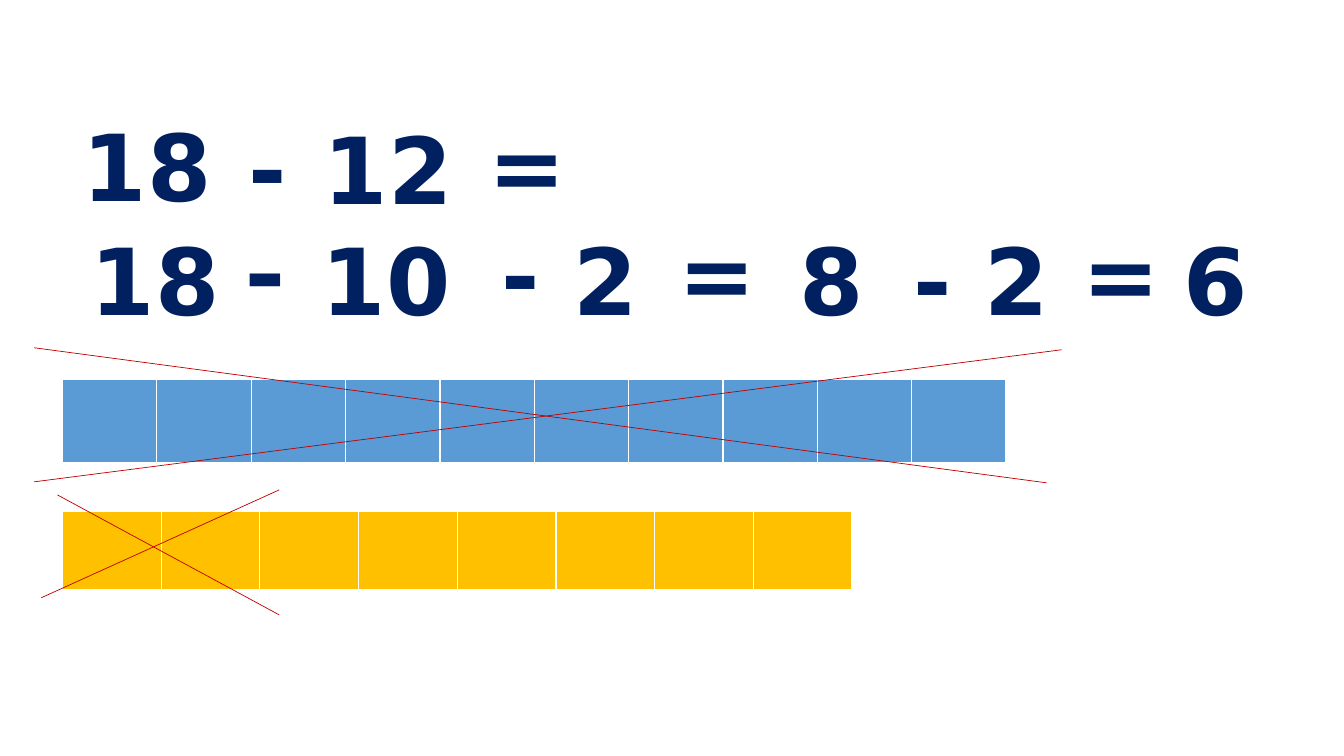
"""Build a slide that subtracts 12 from 18 by crossing out tens and ones."""
from lxml.etree import SubElement
from pptx import Presentation
from pptx.dml.color import RGBColor
from pptx.enum.shapes import MSO_CONNECTOR
from pptx.enum.text import MSO_ANCHOR, MSO_AUTO_SIZE, PP_ALIGN
from pptx.oxml import parse_xml
from pptx.oxml.ns import nsdecls, qn
from pptx.util import Pt

PX = 9144
NAVY, RED, BLUE, GOLD = "002060", "C00000", "5B9BD5", "FFC000"


def color(code):
    return RGBColor.from_string(code)


def write(text, left, top, width, height=121, size=66, font="DejaVu Sans", wrap=False):
    box = slide.shapes.add_textbox(left * PX, top * PX, width * PX, height * PX)
    frame = box.text_frame
    frame.word_wrap = wrap
    frame.auto_size = MSO_AUTO_SIZE.SHAPE_TO_FIT_TEXT
    frame.vertical_anchor = MSO_ANCHOR.TOP
    line = frame.paragraphs[0]
    line.alignment = PP_ALIGN.CENTER
    run = line.add_run()
    run.text = text
    run.font.name = font
    run.font.size = Pt(size)
    run.font.bold = True
    run.font.color.rgb = color(NAVY)


deck = Presentation()
deck.slide_width, deck.slide_height = 1333 * PX, 750 * PX
slide = deck.slides.add_slide(deck.slide_layouts[6])

for text, left, top, width in [
    ("18", 70, 103, 152),
    ("-", 233, 105, 65),
    ("12", 309, 106, 152),
    ("=", 473, 102, 100),
    ("18", 78, 216, 152),
    ("10", 307, 216, 152),
    ("=", 661, 209, 100),
    ("2", 965, 216, 86),
    ("=", 1062, 210, 100),
]:
    write(text, left, top, width)

for text, left, top, width in [
    ("-", 474, 210, 85),
    ("2", 559, 216, 84),
    ("8", 783, 216, 78),
    ("-", 886, 216, 78),
    ("6", 1164, 216, 78),
]:
    write(text, left, top, width, wrap=True)

write("-", 224, 186, 79, height=158, size=88, font="Calibri", wrap=True)

for count, top, width, height, fill in [
    (10, 376, 936, 84, BLUE),
    (8, 507, 783, 79, GOLD),
]:
    strip = slide.shapes.add_table(1, count, 62 * PX, top * PX, width * PX, height * PX).table
    strip.first_row = strip.horz_banding = False
    for cell in strip.iter_cells():
        cell.fill.solid()
        cell.fill.fore_color.rgb = color(fill)
        props = cell.fill._xPr
        for spot, (side, points) in enumerate([("L", 1), ("R", 1), ("T", 1), ("B", 3)]):
            edge = parse_xml(
                f'<a:ln{side} {nsdecls("a")} w="{Pt(points)}"><a:solidFill>'
                f'<a:srgbClr val="FFFFFF"/></a:solidFill></a:ln{side}>'
            )
            props.insert(spot, edge)

for ends in [
    (34, 478, 1053, 347),
    (34, 345, 1038, 479),
    (41, 593, 277, 486),
    (57, 491, 277, 610),
]:
    stroke = slide.shapes.add_connector(MSO_CONNECTOR.STRAIGHT, *[end * PX for end in ends])
    stroke.line.color.rgb = color(RED)
    stroke.line.width = Pt(0.5)
    SubElement(stroke._element.spPr, qn("a:effectLst"))

deck.save("out.pptx")
